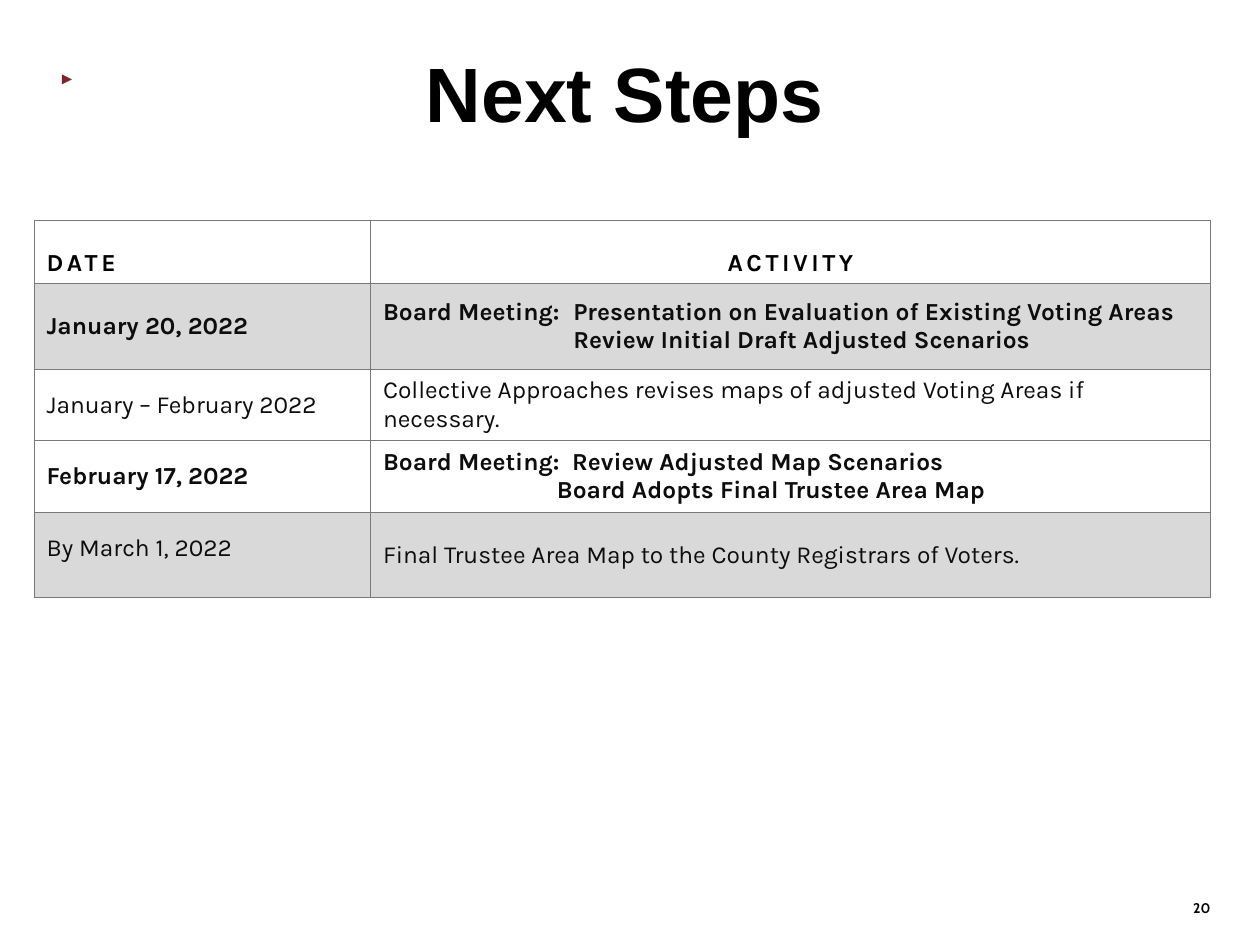
from dataclasses import dataclass

from pptx import Presentation
from pptx import util as u
from pptx.dml.color import RGBColor
from pptx.enum import shapes, text
from pptx.oxml import ns
from lxml import etree

TITLE_FONT, TABLE_FONT, NUMBER_FONT = "Arial", "Karla", "Cabin"
BLACK, INK, GRAY, WHITE, RULE, MAROON = "000000", "0D0D0D", "D9D9D9", "FFFFFF", "797979", "7C2529"
LEFT, CENTER = text.PP_ALIGN.LEFT, text.PP_ALIGN.CENTER
MIDDLE, BOTTOM = text.MSO_ANCHOR.MIDDLE, text.MSO_ANCHOR.BOTTOM


def color(hex_string):
    return RGBColor.from_string(hex_string)


def add_child(parent, tag, **attributes):
    return etree.SubElement(parent, ns.qn(tag), **attributes)


@dataclass
class Cell:
    lines: list
    bold: bool = False
    fill: str = None
    ink: str = INK
    anchor: int = MIDDLE
    align: int = LEFT
    tabs: tuple = ()
    spacing: int = 0
    bottom: float = 0.05


class Deck:
    """Holds the text style and the slide being built."""

    def __init__(self, slide):
        self.slide = slide

    def add_text(self, paragraph, words, font, size, ink, bold, align=LEFT):
        paragraph.alignment = align
        run = paragraph.add_run()
        run.text = words
        run.font.name, run.font.size, run.font.bold = font, u.Pt(size), bold
        run.font.color.rgb = color(ink)
        return run

    def title(self, words, left, top, width, height):
        title = self.slide.shapes.title
        title.left, title.top = u.Inches(left), u.Inches(top)
        title.width, title.height = u.Inches(width), u.Inches(height)
        frame = title.text_frame
        frame.auto_size = text.MSO_AUTO_SIZE.NONE
        frame.vertical_anchor = text.MSO_ANCHOR.TOP
        frame.margin_top = u.Inches(0.11)
        self.add_text(frame.paragraphs[0], words, TITLE_FONT, 44, BLACK, True, CENTER)

    def marker(self, left, top, size):
        marker = self.slide.shapes.add_shape(
            shapes.MSO_SHAPE.ISOSCELES_TRIANGLE,
            u.Inches(left), u.Inches(top), u.Inches(size), u.Inches(size))
        marker.rotation = 90
        marker.shadow.inherit = False
        marker.fill.solid()
        marker.fill.fore_color.rgb = color(MAROON)
        marker.line.fill.background()

    def page_number(self, number, left, top, width, height):
        box = self.slide.shapes.add_textbox(
            u.Inches(left), u.Inches(top), u.Inches(width), u.Inches(height))
        frame = box.text_frame
        frame.word_wrap = True
        frame.vertical_anchor = BOTTOM
        frame.margin_left, frame.margin_top = u.Inches(0.39), u.Inches(0.24)
        frame.margin_right, frame.margin_bottom = 0, u.Inches(0.16)
        self.add_text(frame.paragraphs[0], number, NUMBER_FONT, 8, BLACK, True)

    def table(self, rows, left, top, widths, heights):
        frame = self.slide.shapes.add_table(
            len(rows), len(widths), u.Inches(left), u.Inches(top),
            u.Inches(sum(widths)), u.Inches(sum(heights)))
        schedule = frame.table
        schedule.horz_banding = schedule.first_row = False
        for column, width in zip(schedule.columns, widths):
            column.width = u.Inches(width)
        for row, height in zip(schedule.rows, heights):
            row.height = u.Inches(height)
        for r, row in enumerate(rows):
            for c, content in enumerate(row):
                self.fill_cell(schedule.cell(r, c), content)

    def fill_cell(self, cell, content):
        cell.vertical_anchor = content.anchor
        cell.margin_bottom = u.Inches(content.bottom)
        self.borders(cell)
        if content.fill:
            cell.fill.solid()
            cell.fill.fore_color.rgb = color(content.fill)
        else:
            cell.fill.background()
        for i, line in enumerate(content.lines):
            frame = cell.text_frame
            paragraph = frame.add_paragraph() if i else frame.paragraphs[0]
            if content.tabs:
                tab_list = add_child(paragraph._p.get_or_add_pPr(), "a:tabLst")
                add_child(tab_list, "a:tab", pos=str(u.Inches(content.tabs[i])), algn="l")
            run = self.add_text(paragraph, line, TABLE_FONT, 14, content.ink,
                                content.bold, content.align)
            if content.spacing:
                run.font._element.set("spc", str(content.spacing * 100))

    def borders(self, cell):
        properties = cell._tc.get_or_add_tcPr()
        for side in ("a:lnL", "a:lnR", "a:lnT", "a:lnB"):
            line = add_child(properties, side, w=str(u.Pt(0.5)))
            add_child(add_child(line, "a:solidFill"), "a:srgbClr", val=RULE)


def heading(words, align=LEFT):
    return Cell([words], True, None, BLACK, BOTTOM, align, spacing=2)


def main():
    prs = Presentation()
    prs.slide_width, prs.slide_height = u.Inches(10), u.Inches(7.5)
    deck = Deck(prs.slides.add_slide(prs.slide_layouts[5]))

    # Page furniture
    deck.page_number("20", 9.08, 6.67, 0.77, 0.63)
    deck.marker(0.49, 0.59, 0.08)

    # Schedule
    rows = [
        [heading("DATE"), heading("ACTIVITY", CENTER)],
        [Cell(["January 20, 2022"], True, GRAY),
         Cell(["Board Meeting:\tPresentation on Evaluation of Existing Voting Areas",
               "\tReview Initial Draft Adjusted Scenarios"], True, GRAY, tabs=(1.51, 1.51))],
        [Cell(["January – February 2022"], fill=WHITE),
         Cell(["Collective Approaches revises maps of adjusted Voting Areas if necessary."],
              fill=WHITE)],
        [Cell(["February 17, 2022"], True, WHITE),
         Cell(["Board Meeting:\tReview Adjusted Map Scenarios",
               "\tBoard Adopts Final Trustee Area Map"], True, WHITE, tabs=(1.5, 1.38))],
        [Cell(["By March 1, 2022"], fill=GRAY, anchor=BOTTOM, bottom=0.28),
         Cell(["Final Trustee Area Map to the County Registrars of Voters."], fill=GRAY)],
    ]
    deck.table(rows, 0.27, 1.75, [2.67, 6.67], [0.5, 0.68, 0.55, 0.55, 0.68])

    # Title
    deck.title("Next Steps", 0.25, 0.25, 9.42, 1.17)
    prs.save("out.pptx")


if __name__ == "__main__":
    main()
